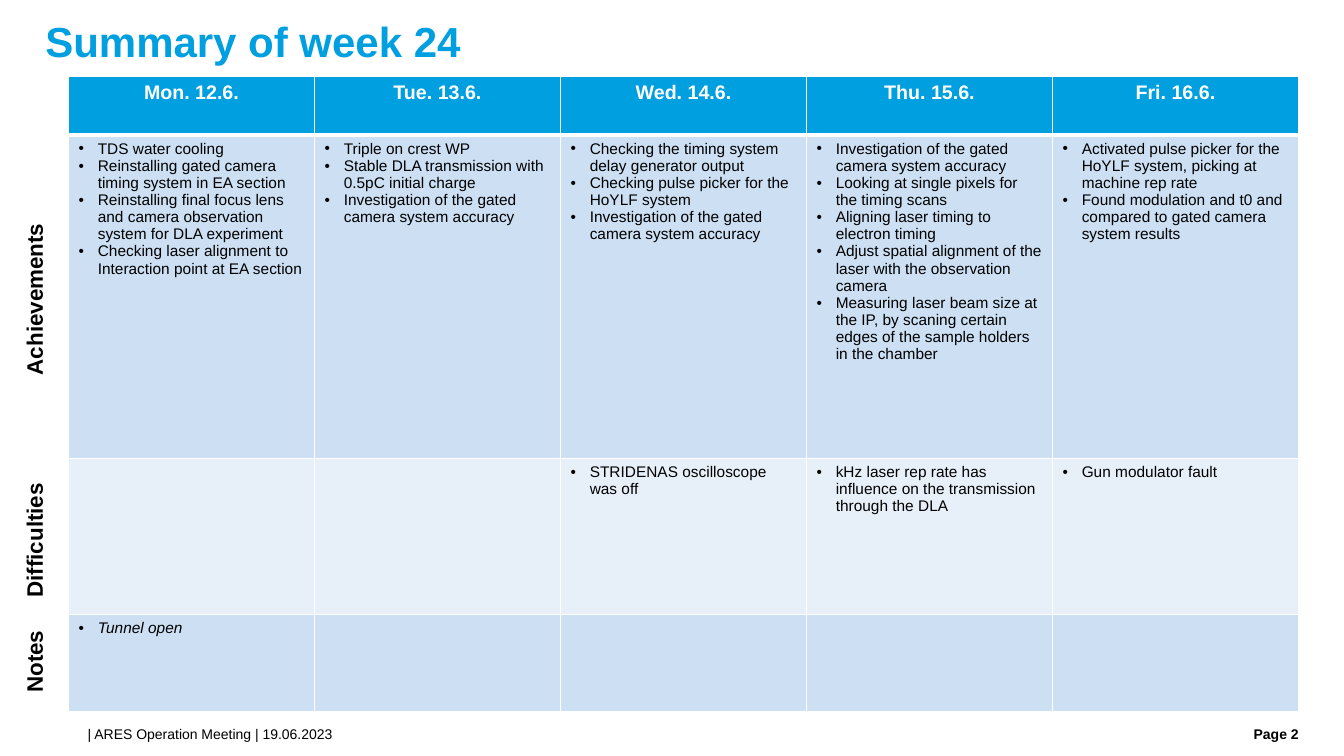
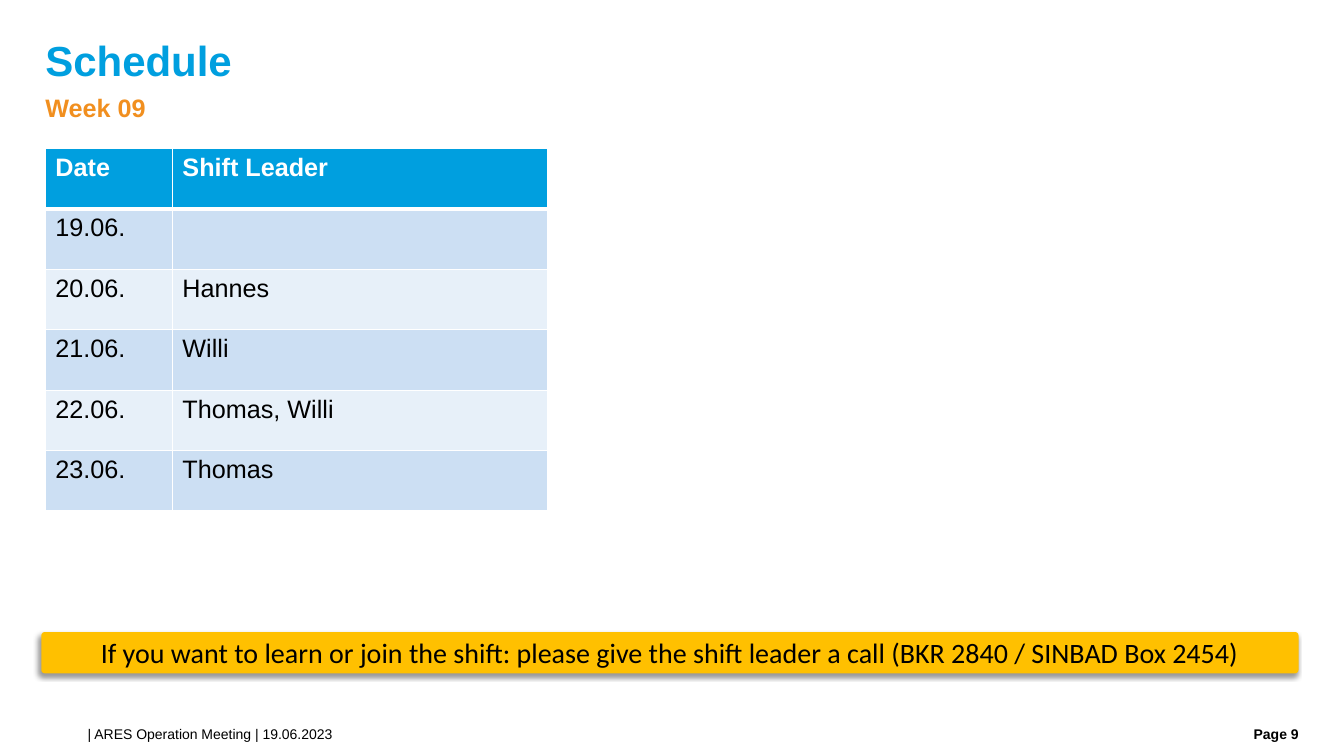
from lxml.etree import SubElement
from pptx import Presentation
from pptx.dml.color import RGBColor
from pptx.enum.shapes import MSO_SHAPE
from pptx.enum.text import MSO_ANCHOR, MSO_AUTO_SIZE, PP_ALIGN
from pptx.oxml.ns import qn
from pptx.util import Inches, Pt

BLUE, ORANGE, YELLOW = "009FDF", "F18F1F", "FFC000"
WHITE, BLACK = "FFFFFF", "000000"
BANDS = ("CCDFF3", "E7F0F9")
FOOTER = "| ARES Operation Meeting | 19.06.2023"
NOTICE = ("If you want to learn or join the shift: please give the shift leader a call "
          "(BKR 2840 / SINBAD Box 2454)")

DAYS = ["Mon. 12.6.", "Tue. 13.6.", "Wed. 14.6.", "Thu. 15.6.", "Fri. 16.6."]
ACHIEVEMENTS = [
    ["TDS water cooling",
     "Reinstalling gated camera timing system in EA section",
     "Reinstalling final focus lens and camera observation system for DLA experiment",
     "Checking laser alignment to Interaction point at EA section"],
    ["Triple on crest WP",
     "Stable DLA transmission with 0.5pC initial charge",
     "Investigation of the gated camera system accuracy"],
    ["Checking the timing system delay generator output",
     "Checking pulse picker for the HoYLF system",
     "Investigation of the gated camera system accuracy"],
    ["Investigation of the gated camera system accuracy",
     "Looking at single pixels for the timing scans",
     "Aligning laser timing to electron timing",
     "Adjust spatial alignment of the laser with the observation camera",
     "Measuring laser beam size at the IP, by scaning certain edges of the sample holders "
     "in the chamber"],
    ["Activated pulse picker for the HoYLF system, picking at machine rep rate",
     "Found modulation and t0 and compared to gated camera system results"],
]
DIFFICULTIES = [
    [], [],
    ["STRIDENAS oscilloscope was off"],
    ["kHz laser rep rate has influence on the transmission through the DLA"],
    ["Gun modulator fault"],
]
NOTES = [["Tunnel open"], [], [], [], []]
ROW_LABELS = [("Achievements", 1.72, 2.96), ("Difficulties", 1.35, 5.35), ("Notes", 0.82, 6.56)]
SHIFTS = [("19.06.", ""), ("20.06.", "Hannes"), ("21.06.", "Willi"),
          ("22.06.", "Thomas, Willi"), ("23.06.", "Thomas")]


def rgb(color):
    return RGBColor.from_string(color)


def style(paragraph, size, color=BLACK, bold=False, italic=False, name="Arial"):
    for run in paragraph.runs:
        font = run.font
        font.name, font.size, font.bold, font.italic = name, Pt(size), bold, italic
        font.color.rgb = rgb(color)


def add_text(slide, box, text, size, color=BLACK, bold=False, align=PP_ALIGN.LEFT,
             anchor=MSO_ANCHOR.TOP, spacing=1.0):
    frame = slide.shapes.add_textbox(*map(Inches, box)).text_frame
    frame.margin_left = frame.margin_right = frame.margin_top = frame.margin_bottom = 0
    frame.word_wrap = True
    frame.vertical_anchor = anchor
    frame.text = text
    paragraph = frame.paragraphs[0]
    paragraph.alignment, paragraph.line_spacing = align, spacing
    style(paragraph, size, color, bold)


def add_page(presentation, title, title_top, page):
    slide = presentation.slides.add_slide(presentation.slide_layouts[6])
    add_text(slide, (0.45, title_top, 12.44, 0.49), title, 30, BLUE, True,
             anchor=MSO_ANCHOR.MIDDLE, spacing=0.9)
    add_text(slide, (0.87, 7.2, 10.88, 0.2), FOOTER, 10)
    add_text(slide, (11.86, 7.2, 1.02, 0.2), f"Page {page}", 10, bold=True, align=PP_ALIGN.RIGHT)
    return slide


def add_bullet(paragraph):
    properties = paragraph._p.get_or_add_pPr()
    properties.set("marL", str(Inches(0.19)))
    properties.set("indent", str(-Inches(0.19)))
    SubElement(properties, qn("a:buFont"), typeface="Arial")
    SubElement(properties, qn("a:buChar"), char="•")


def set_borders(cell, row):
    properties = cell._tc.get_or_add_tcPr()
    widths = {"L": 1, "R": 1, "T": 3 if row == 1 else 1, "B": 3 if row == 0 else 1}
    for index, (side, width) in enumerate(widths.items()):
        line = SubElement(properties, qn(f"a:ln{side}"), w=str(Pt(width)))
        fill = SubElement(line, qn("a:solidFill"))
        SubElement(fill, qn("a:srgbClr"), val=WHITE)
        properties.insert(index, line)


def add_table(slide, left, top, widths, heights, rows, header_size, body_size,
              header_align=PP_ALIGN.LEFT, bulleted=False, italic_row=None):
    box = map(Inches, (left, top, sum(widths), sum(heights)))
    table = slide.shapes.add_table(len(rows), len(widths), *box).table
    for column, width in zip(table.columns, widths):
        column.width = Inches(width)
    for row, (lines, height) in enumerate(zip(rows, heights)):
        table.rows[row].height = Inches(height)
        header = row == 0
        for column, content in enumerate(lines):
            cell = table.cell(row, column)
            cell.fill.solid()
            cell.fill.fore_color.rgb = rgb(BLUE if header else BANDS[(row - 1) % 2])
            set_borders(cell, row)
            cell.text = content if isinstance(content, str) else "\n".join(content)
            for paragraph in cell.text_frame.paragraphs:
                if header:
                    paragraph.alignment = header_align
                    style(paragraph, header_size, WHITE, True)
                    continue
                if bulleted and paragraph.text:
                    add_bullet(paragraph)
                style(paragraph, body_size, italic=row == italic_row)


def add_row_label(slide, text, width, middle):
    height = 0.37
    box = (0.34 - width / 2, middle - height / 2, width, height)
    label = slide.shapes.add_textbox(*map(Inches, box))
    label.rotation = 270
    frame = label.text_frame
    frame.word_wrap = False
    frame.auto_size = MSO_AUTO_SIZE.SHAPE_TO_FIT_TEXT
    frame.text = text
    style(frame.paragraphs[0], 16, bold=True)


def add_notice(slide):
    box = map(Inches, (0.41, 6.27, 12.47, 0.41))
    shape = slide.shapes.add_shape(MSO_SHAPE.ROUNDED_RECTANGLE, *box)
    shape.adjustments[0] = 0.085
    shape.fill.solid()
    shape.fill.fore_color.rgb = rgb(YELLOW)
    shape.line.fill.background()
    shape.shadow.inherit = False
    effects = shape._element.spPr.find(qn("a:effectLst"))
    shadow = SubElement(effects, qn("a:outerShdw"), blurRad=str(Pt(4)), dist=str(Pt(3)),
                        dir=str(135 * 60000), algn="tr", rotWithShape="0")
    color = SubElement(shadow, qn("a:srgbClr"), val=BLACK)
    SubElement(color, qn("a:alpha"), val="40000")
    frame = shape.text_frame
    frame.text = NOTICE
    frame.vertical_anchor = MSO_ANCHOR.MIDDLE
    frame.paragraphs[0].alignment = PP_ALIGN.CENTER
    style(frame.paragraphs[0], 20, name="Calibri")


def build_summary(presentation):
    slide = add_page(presentation, "Summary of week 24", 0.19, 2)
    rows = [DAYS, ACHIEVEMENTS, DIFFICULTIES, NOTES]
    add_table(slide, 0.68, 0.76, [2.44] * len(DAYS), [0.58, 3.21, 1.55, 0.96], rows, 14, 11,
              PP_ALIGN.CENTER, bulleted=True, italic_row=3)
    for text, width, middle in ROW_LABELS:
        add_row_label(slide, text, width, middle)


def build_schedule(presentation):
    slide = add_page(presentation, "Schedule", 0.38, 9)
    add_text(slide, (0.45, 0.89, 12.44, 0.41), "Week 09", 18, ORANGE, True, spacing=1.1)
    add_notice(slide)
    rows = [("Date", "Shift Leader"), *SHIFTS]
    add_table(slide, 0.45, 1.47, [1.26, 3.72], [0.6] * len(rows), rows, 18, 18)


def main():
    """Build the weekly summary and the shift schedule."""
    presentation = Presentation()
    presentation.slide_width, presentation.slide_height = Inches(13.33), Inches(7.5)
    build_summary(presentation)
    build_schedule(presentation)
    presentation.save("out.pptx")


if __name__ == "__main__":
    main()
